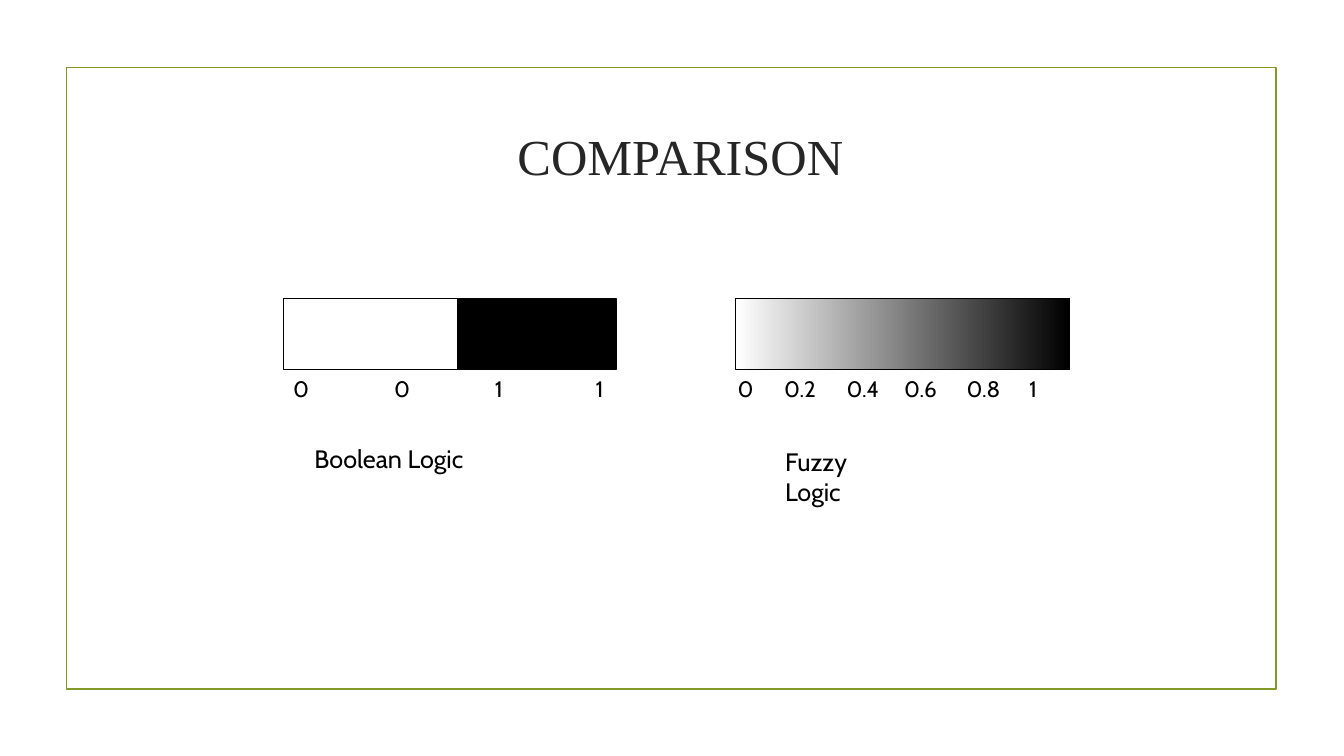
from dataclasses import dataclass

from lxml.etree import SubElement
from pptx import Presentation
from pptx.dml.color import RGBColor
from pptx.enum.shapes import MSO_SHAPE
from pptx.enum.text import MSO_ANCHOR, PP_ALIGN
from pptx.oxml.ns import qn
from pptx.util import Inches, Pt


@dataclass(frozen=True)
class Theme:
    black: RGBColor = RGBColor(0x00, 0x00, 0x00)
    white: RGBColor = RGBColor(0xFF, 0xFF, 0xFF)
    frame: RGBColor = RGBColor(0x83, 0x99, 0x2A)
    heading: RGBColor = RGBColor(0x26, 0x26, 0x26)
    heading_font: str = "Times New Roman"
    body_font: str = "Cabin"
    heading_size: int = 36
    caption_size: int = 18
    scale_size: int = 16
    frame_line: float = 1.25
    bar_line: float = 0.75


THEME = Theme()
WIDTH, HEIGHT = Inches(13.33), Inches(7.5)
BAR_TOP, BAR_HEIGHT = 39.47, 9.47
SCALE_TOP, SCALE_HEIGHT = 48.93, 4.93
CAPTION_HEIGHT = 5.33


def place(left, top, width, height):
    """Turn percentages of the slide's size into lengths."""
    return (int(WIDTH * left / 100), int(HEIGHT * top / 100),
            int(WIDTH * width / 100), int(HEIGHT * height / 100))


def add_rectangle(page, area, line_color, line_width, fills=()):
    """No fill colour leaves it hollow, one is solid, two make a gradient."""
    shape = page.shapes.add_shape(MSO_SHAPE.RECTANGLE, *place(*area))
    shape.shadow.inherit = False
    shape.line.color.rgb = line_color
    shape.line.width = Pt(line_width)
    if not fills:
        shape.fill.background()
    elif len(fills) == 1:
        shape.fill.solid()
        shape.fill.fore_color.rgb = fills[0]
    else:
        shape.fill.gradient()
        shape.fill.gradient_angle = 0
        for stop, color in zip(shape.fill.gradient_stops, fills):
            stop.color.rgb = color


def add_bar(page, left, width, *fills):
    area = (left, BAR_TOP, width, BAR_HEIGHT)
    add_rectangle(page, area, THEME.black, THEME.bar_line, fills)


def add_text(page, area, text, size, font=THEME.body_font, color=THEME.black):
    box = page.shapes.add_textbox(*place(*area))
    box.text_frame.word_wrap = True
    para = box.text_frame.paragraphs[0]
    span = para.add_run()
    span.text = text
    span.font.size = Pt(size)
    span.font.name = font
    span.font.color.rgb = color
    return box.text_frame


def add_title(page, text):
    frame = add_text(page, (15, 6.67, 71.25, 27.87), text, THEME.heading_size,
                     THEME.heading_font, THEME.heading)
    frame.vertical_anchor = MSO_ANCHOR.MIDDLE
    frame.paragraphs[0].alignment = PP_ALIGN.CENTER


def add_scale(page, left, width, values, tab_stops):
    """Write the values under a bar, with tab stops in inches."""
    area = (left, SCALE_TOP, width, SCALE_HEIGHT)
    frame = add_text(page, area, "\t".join(values), THEME.scale_size)
    properties = frame.paragraphs[0]._p.get_or_add_pPr()
    tabs = SubElement(properties, qn("a:tabLst"))
    for stop in tab_stops:
        SubElement(tabs, qn("a:tab"), pos=str(Inches(stop)), algn="l")


def add_caption(page, left, top, width, text):
    add_text(page, (left, top, width, CAPTION_HEIGHT), text, THEME.caption_size)


def main():
    deck = Presentation()
    deck.slide_width, deck.slide_height = WIDTH, HEIGHT
    page = deck.slides.add_slide(deck.slide_layouts[6])

    add_rectangle(page, (4.95, 8.93, 90, 82.27), THEME.frame, THEME.frame_line)
    add_title(page, "COMPARISON")

    add_bar(page, 21.08, 12.98, THEME.white)
    add_bar(page, 34.06, 11.78, THEME.black)
    add_scale(page, 21.08, 25.2, ["0", "0", "1", "1"], [1, 2, 3])
    add_caption(page, 22.65, 58, 12.75, "Boolean Logic")

    add_bar(page, 54.75, 24.83, THEME.white, THEME.black)
    add_scale(page, 54.15, 26.25, ["0", "0.2", "0.4", "0.6", "0.8", "1"],
              [0.46, 1.08, 1.65, 2.27, 2.89])
    add_caption(page, 57.68, 58.4, 9.75, "Fuzzy Logic")

    deck.save("out.pptx")


if __name__ == "__main__":
    main()
